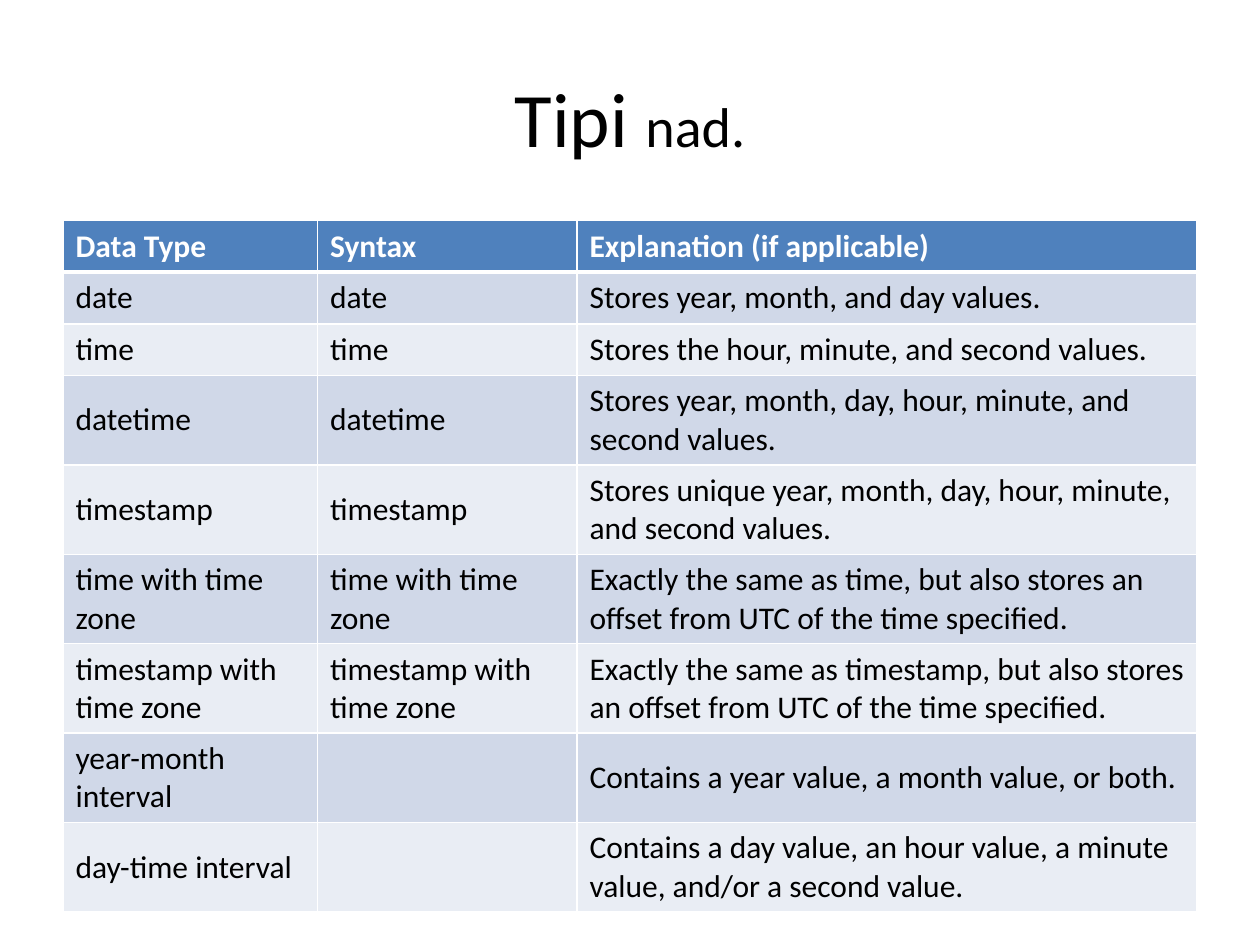
from dataclasses import dataclass

from lxml import etree
from pptx import Presentation
from pptx.dml.color import RGBColor
from pptx.enum.text import MSO_ANCHOR, PP_ALIGN
from pptx.oxml.ns import qn
from pptx.util import Inches, Pt

MIDDLE = MSO_ANCHOR.MIDDLE
CENTER = PP_ALIGN.CENTER


@dataclass(frozen=True)
class Theme:
    font: str = "Calibri"
    text: RGBColor = RGBColor(0x00, 0x00, 0x00)
    white: RGBColor = RGBColor(0xFF, 0xFF, 0xFF)
    header: RGBColor = RGBColor(0x4F, 0x81, 0xBD)
    bands: tuple = (RGBColor(0xE9, 0xED, 0xF4), RGBColor(0xD0, 0xD8, 0xE8))
    title_size: Pt = Pt(44)
    subtitle_size: Pt = Pt(32)
    body_size: Pt = Pt(18)
    border: Pt = Pt(1)
    header_border: Pt = Pt(3)


THEME = Theme()

COLUMN_WIDTHS = (2.02, 2.06, 4.92)
LINE_HEIGHT = 0.3
ROW_PADDING = 0.11

# Number of text lines, then the cells of the row
ROWS = (
    (1, "Data Type", "Syntax", "Explanation (if applicable)"),
    (1, "date", "date", "Stores year, month, and day values."),
    (1, "time", "time", "Stores the hour, minute, and second values."),
    (2, "datetime", "datetime",
     "Stores year, month, day, hour, minute, and second values."),
    (2, "timestamp", "timestamp",
     "Stores unique year, month, day, hour, minute, and second values."),
    (2, "time with time zone", "time with time zone",
     "Exactly the same as time, but also stores an offset from UTC of the time specified."),
    (2, "timestamp with time zone", "timestamp with time zone",
     "Exactly the same as timestamp, but also stores an offset from UTC of the time specified."),
    (2, "year-month interval", "", "Contains a year value, a month value, or both."),
    (2, "day-time interval", "",
     "Contains a day value, an hour value, a minute value, and/or a second value."),
)


def set_borders(cell, top, bottom):
    """Draw white cell borders; they must come before the fill in the XML."""
    properties = cell._tc.get_or_add_tcPr()
    widths = {"lnL": THEME.border, "lnR": THEME.border, "lnT": top, "lnB": bottom}
    for position, (side, width) in enumerate(widths.items()):
        line = etree.Element(qn(f"a:{side}"), w=str(int(width)))
        fill = etree.SubElement(line, qn("a:solidFill"))
        etree.SubElement(fill, qn("a:srgbClr"), val=str(THEME.white))
        properties.insert(position, line)


presentation = Presentation()
presentation.slide_width = Inches(10)
presentation.slide_height = Inches(7.5)
slide = presentation.slides.add_slide(presentation.slide_layouts[6])

# Title
title = slide.shapes.add_textbox(Inches(0.5), Inches(0.3), Inches(9), Inches(1.25))
title.text_frame.word_wrap = True
title.text_frame.vertical_anchor = MIDDLE
paragraph = title.text_frame.paragraphs[0]
paragraph.alignment = CENTER
paragraph.font.name = THEME.font
paragraph.font.color.rgb = THEME.text
for text, size in (("Tipi ", THEME.title_size), ("nad.", THEME.subtitle_size)):
    run = paragraph.add_run()
    run.text = text
    run.font.size = size

# Table of date and time types
row_heights = [ROW_PADDING + LINE_HEIGHT * row[0] for row in ROWS]
table = slide.shapes.add_table(
    len(ROWS), len(COLUMN_WIDTHS), Inches(0.5), Inches(1.75),
    Inches(sum(COLUMN_WIDTHS)), Inches(sum(row_heights))).table
for column, width in zip(table.columns, COLUMN_WIDTHS):
    column.width = Inches(width)

for row_index, (_, *texts) in enumerate(ROWS):
    table.rows[row_index].height = Inches(row_heights[row_index])
    is_header = row_index == 0
    for column_index, text in enumerate(texts):
        cell = table.cell(row_index, column_index)
        cell.text = text
        cell.vertical_anchor = MIDDLE
        cell.fill.solid()
        cell.fill.fore_color.rgb = THEME.header if is_header else THEME.bands[row_index % 2]
        set_borders(cell,
                    top=THEME.header_border if row_index == 1 else THEME.border,
                    bottom=THEME.header_border if is_header else THEME.border)
        font = cell.text_frame.paragraphs[0].font
        font.name = THEME.font
        font.size = THEME.body_size
        font.bold = is_header
        font.color.rgb = THEME.white if is_header else THEME.text

presentation.save("out.pptx")
